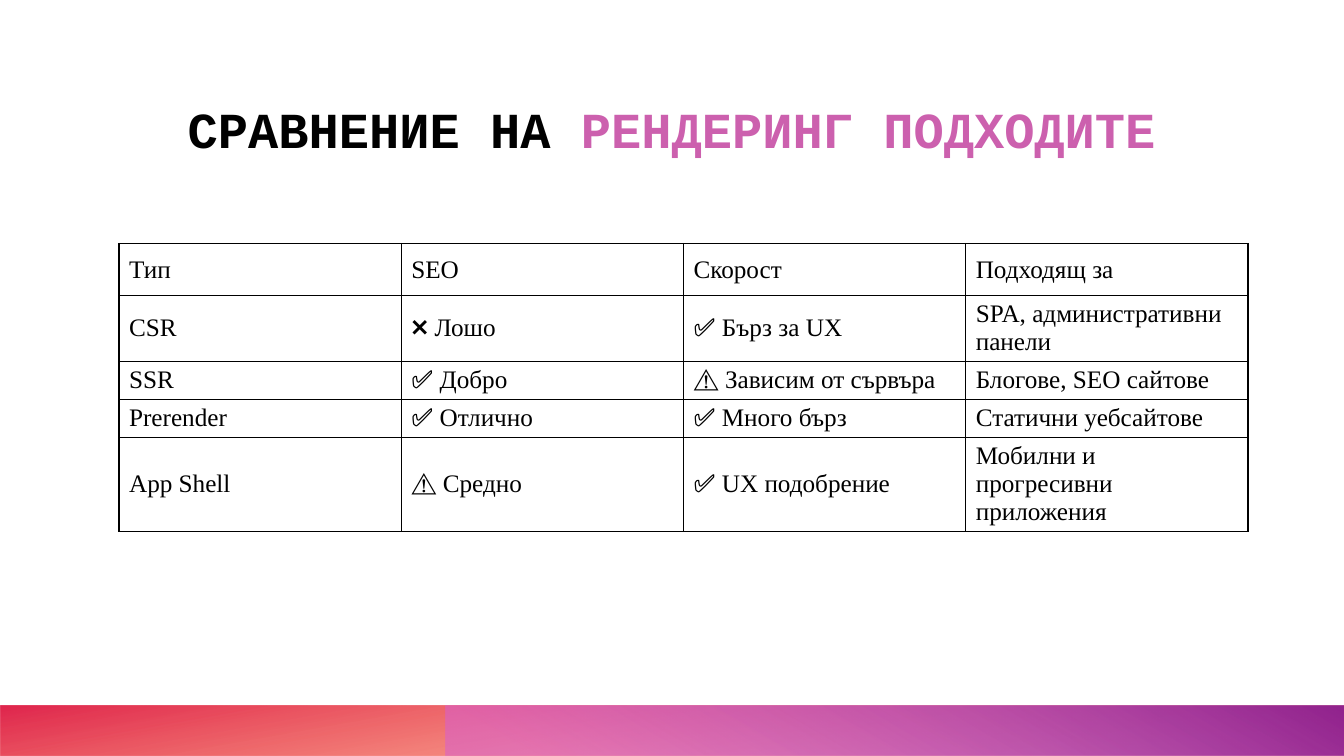
import pptx
import pptx.dml.color
import pptx.enum.shapes
import pptx.enum.text
import pptx.oxml
import pptx.oxml.ns
import pptx.util

Pt = pptx.util.Pt
NS = pptx.oxml.ns.nsdecls("a")


def rgb(code):
    return pptx.dml.color.RGBColor.from_string(code)


class Deck:
    title_font = "Courier New"
    body_font = "Times New Roman"
    ink = "000000"
    accent = "CC60AE"

    def __init__(self, width, height):
        self.prs = pptx.Presentation()
        self.prs.slide_width = Pt(width)
        self.prs.slide_height = Pt(height)
        self.s = self.prs.slides.add_slide(self.prs.slide_layouts[5])

    def run(self, p, text, font, size, color, bold=False):
        r = p.add_run()
        r.text = text
        r.font.name = font
        r.font.size = Pt(size)
        r.font.bold = bold
        r.font.color.rgb = rgb(color)

    def title(self, left, top, width, height, runs):
        sp = self.s.shapes.title
        sp.left, sp.top, sp.width, sp.height = map(Pt, (left, top, width, height))
        tf = sp.text_frame
        tf.word_wrap = True
        tf.auto_size = pptx.enum.text.MSO_AUTO_SIZE.NONE
        tf.vertical_anchor = pptx.enum.text.MSO_ANCHOR.BOTTOM
        tf.margin_left = tf.margin_top = tf.margin_right = tf.margin_bottom = 0
        p = tf.paragraphs[0]
        p.alignment = pptx.enum.text.PP_ALIGN.CENTER
        for text, color in runs:
            self.run(p, text, self.title_font, 36, color, True)

    def gradient_bar(self, left, top, width, height, stops, angle, rotation=0):
        sp = self.s.shapes.add_shape(
            pptx.enum.shapes.MSO_SHAPE.RECTANGLE, *map(Pt, (left, top, width, height)))
        sp.shadow.inherit = False
        sp.line.fill.background()
        sp.rotation = rotation
        spPr = sp._element.spPr
        spPr.xfrm.set("flipH", "1")
        gs = "".join(
            f'<a:gs pos="{pos * 1000}"><a:srgbClr val="{color}">'
            f'<a:alpha val="{alpha * 1000}"/></a:srgbClr></a:gs>'
            for pos, color, alpha in stops)
        spPr.prstGeom.addnext(pptx.oxml.parse_xml(
            f'<a:gradFill {NS} rotWithShape="1"><a:gsLst>{gs}</a:gsLst>'
            f'<a:lin ang="{angle * 60000}" scaled="0"/></a:gradFill>'))

    def table(self, left, top, col_width, heights, rows):
        cols = len(rows[0])
        table = self.s.shapes.add_table(
            len(rows), cols, Pt(left), Pt(top),
            Pt(col_width * cols), Pt(sum(heights))).table
        table.first_row = table.horz_banding = False
        for col in table.columns:
            col.width = Pt(col_width)
        for row, height, texts in zip(table.rows, heights, rows):
            row.height = Pt(height)
            for cell, text in zip(row.cells, texts):
                self.cell(cell, text)

    def cell(self, cell, text):
        cell.vertical_anchor = pptx.enum.text.MSO_ANCHOR.MIDDLE
        self.run(cell.text_frame.paragraphs[0], text, self.body_font, 18, self.ink)
        cell.fill.background()
        tcPr = cell._tc.get_or_add_tcPr()
        for i, side in enumerate(("lnL", "lnR", "lnT", "lnB")):
            tcPr.insert(i, pptx.oxml.parse_xml(
                f'<a:{side} {NS} w="{Pt(1)}"><a:solidFill>'
                f'<a:srgbClr val="{self.ink}"/></a:solidFill></a:{side}>'))


def main():
    deck = Deck(960, 540)
    deck.gradient_bar(0, 504, 960, 36,
                      [(0, "FE4A00", 28), (14, "FE4A00", 28), (100, "DA002F", 85)],
                      100, rotation=180)
    deck.gradient_bar(318, 504, 642, 36,
                      [(0, "D85FD4", 55), (9, "D85FD4", 55),
                       (99, "92248E", 100), (100, "92248E", 100)], 240)
    deck.title(69, 35.5, 821.5, 77.5,
               [("СРАВНЕНИЕ НА ", deck.ink), ("РЕНДЕРИНГ ПОДХОДИТЕ", deck.accent)])
    deck.table(85, 174, 201.6, [37, 47, 27, 27, 67], [
        ("Тип", "SEO", "Скорост", "Подходящ за"),
        ("CSR", "❌ Лошо", "✅ Бърз за UX", "SPA, административни панели"),
        ("SSR", "✅ Добро", "⚠️ Зависим от сървъра", "Блогове, SEO сайтове"),
        ("Prerender", "✅ Отлично", "✅ Много бърз", "Статични уебсайтове"),
        ("App Shell", "⚠️ Средно", "✅ UX подобрение",
         "Мобилни и прогресивни приложения"),
    ])
    deck.prs.save("out.pptx")


if __name__ == "__main__":
    main()
